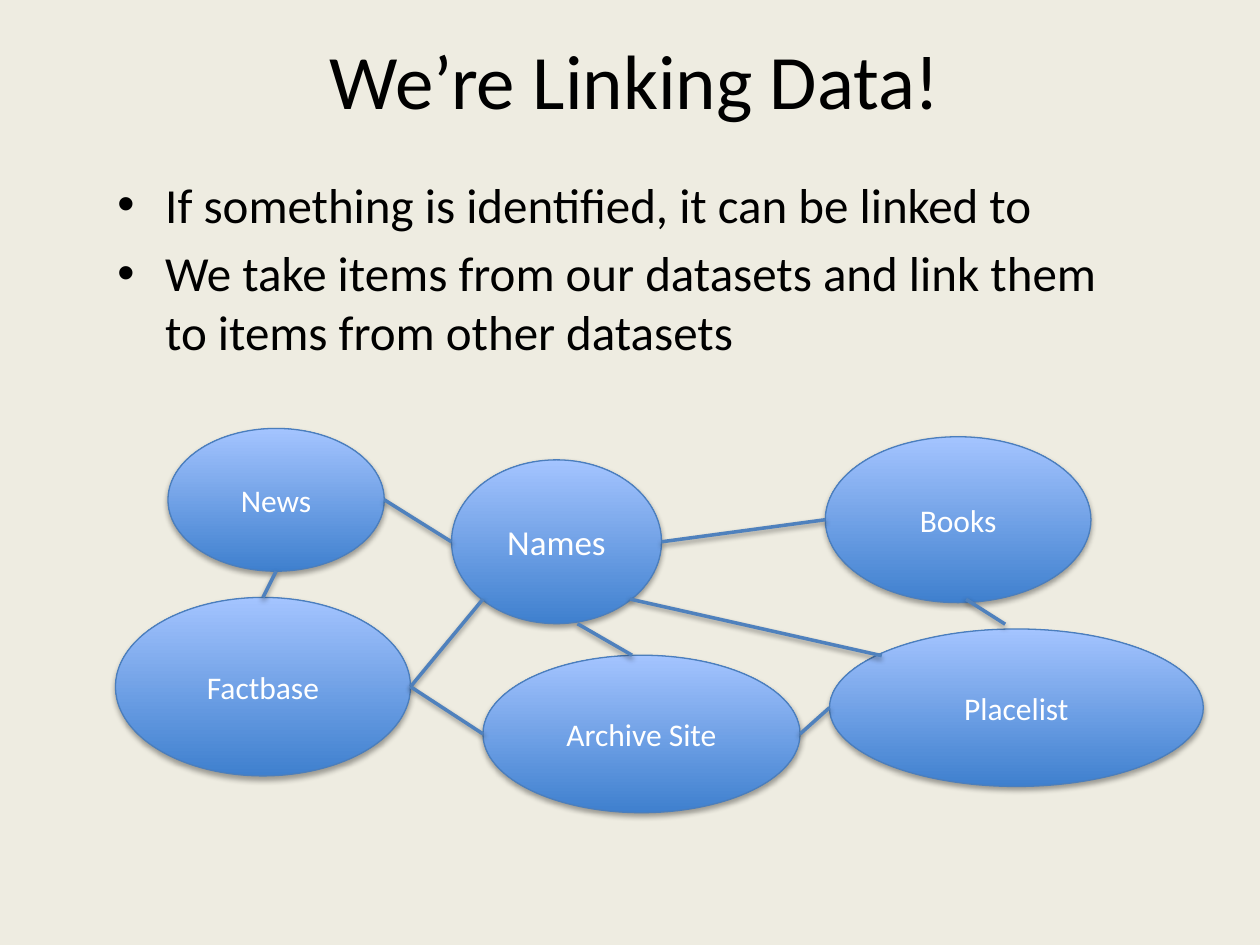
from lxml.etree import SubElement
from pptx import Presentation
from pptx.dml.color import RGBColor
from pptx.enum.shapes import MSO_CONNECTOR, MSO_SHAPE
from pptx.enum.text import MSO_ANCHOR, PP_ALIGN
from pptx.oxml.ns import qn
from pptx.util import Inches, Pt

COLS, ROWS = 120, 90
FONT = "Calibri"

# name: (column, row, columns wide, rows high, text size)
NODES = {
    "News": (16, 40.8, 20.6, 13.6, 18),
    "Names": (43, 43.8, 20, 15.6, 20),
    "Factbase": (11, 56.9, 28.1, 17, 18),
    "Archive Site": (46, 62.4, 30.2, 15, 18),
    "Books": (78.6, 41.6, 25.3, 15.8, 18),
    "Placelist": (79, 59.9, 35.6, 15, 18),
}

# Points on an ellipse, as shares of its width and height
TOP, LEFT, BASE, RIGHT = (0.5, 0), (0, 0.5), (0.5, 1), (1, 0.5)
NEAR, FAR = 0.15, 0.85

LINKS = [
    ("News", RIGHT, "Names", LEFT),
    ("Names", RIGHT, "Books", LEFT),
    ("Factbase", RIGHT, "Names", (NEAR, FAR)),
    ("Names", (0.6, 1), "Archive Site", (0.47, 0)),
    ("Names", (FAR, FAR), "Placelist", (0.14, 0.17)),
    ("Books", (0.53, 0.98), "Placelist", (0.47, -0.03)),
    ("News", BASE, "Factbase", TOP),
    ("Factbase", RIGHT, "Archive Site", LEFT),
    ("Archive Site", RIGHT, "Placelist", LEFT),
]

POINTS = [
    "If something is identified, it can be linked to",
    "We take items from our datasets and link them to items from other datasets",
]


def grid(*units):
    """Turn grid units, each a twelfth of an inch, into lengths."""
    return [Inches(unit / 12) for unit in units]


def color(code):
    return RGBColor.from_string(code)


def style(para, size, code):
    para.font.name = FONT
    para.font.size = Pt(size)
    para.font.color.rgb = color(code)


def shade(shape, dist, alpha):
    """Cast a soft shadow straight down."""
    props = shape._element.spPr
    effects = props.find(qn("a:effectLst"))
    if effects is None:
        effects = SubElement(props, qn("a:effectLst"))
    shadow = SubElement(effects, qn("a:outerShdw"), blurRad=str(Pt(3.1)),
                        dist=str(Pt(dist)), dir="5400000", rotWithShape="0")
    tint = SubElement(shadow, qn("a:srgbClr"), val="000000")
    SubElement(tint, qn("a:alpha"), val=str(alpha * 1000))


def add_title(slide, text):
    title = slide.shapes.title
    title.left, title.top, title.width, title.height = grid(12, 1, 97, 13)
    frame = title.text_frame
    frame.text = text
    frame.vertical_anchor = MSO_ANCHOR.MIDDLE
    para = frame.paragraphs[0]
    para.alignment = PP_ALIGN.CENTER
    style(para, 44, "000000")


def add_list(slide, points):
    frame = slide.shapes.add_textbox(*grid(10, 16, 97, 52)).text_frame
    frame.word_wrap = True
    for i, point in enumerate(points):
        para = frame.add_paragraph() if i else frame.paragraphs[0]
        para.text = point
        para.space_before = Pt(5.6)
        style(para, 28, "000000")
        props = para._p.get_or_add_pPr()
        props.set("marL", str(Inches(0.38)))
        props.set("indent", str(-Inches(0.38)))
        SubElement(props, qn("a:buFont"), typeface="Arial")
        SubElement(props, qn("a:buChar"), char="•")


def add_node(slide, name):
    *box, size = NODES[name]
    node = slide.shapes.add_shape(MSO_SHAPE.OVAL, *grid(*box))
    node.fill.gradient()
    node.fill.gradient_angle = 90
    for stop, code in zip(node.fill.gradient_stops, ("3F80CE", "A4C4FF")):
        stop.color.rgb = color(code)
    node.line.color.rgb = color("4B7EBC")
    node.line.width = Pt(0.75)
    node.shadow.inherit = False
    shade(node, 1.8, 35)
    frame = node.text_frame
    frame.text = name
    frame.vertical_anchor = MSO_ANCHOR.MIDDLE
    para = frame.paragraphs[0]
    para.alignment = PP_ALIGN.CENTER
    style(para, size, "FFFFFF")


def spot(name, share):
    x, y, wide, high, _ = NODES[name]
    return grid(x + wide * share[0], y + high * share[1])


def add_link(slide, start, out, end, into):
    link = slide.shapes.add_connector(
        MSO_CONNECTOR.STRAIGHT, *spot(start, out), *spot(end, into))
    link.line.color.rgb = color("4F81BD")
    link.line.width = Pt(2)
    shade(link, 1.6, 38)


def main():
    deck = Presentation()
    deck.slide_width, deck.slide_height = grid(COLS, ROWS)
    slide = deck.slides.add_slide(deck.slide_layouts[5])
    slide.background.fill.solid()
    slide.background.fill.fore_color.rgb = color("EEECE1")
    add_title(slide, "We’re Linking Data!")
    add_list(slide, POINTS)
    for name in NODES:
        add_node(slide, name)
    for link in LINKS:
        add_link(slide, *link)
    deck.save("out.pptx")


if __name__ == "__main__":
    main()
